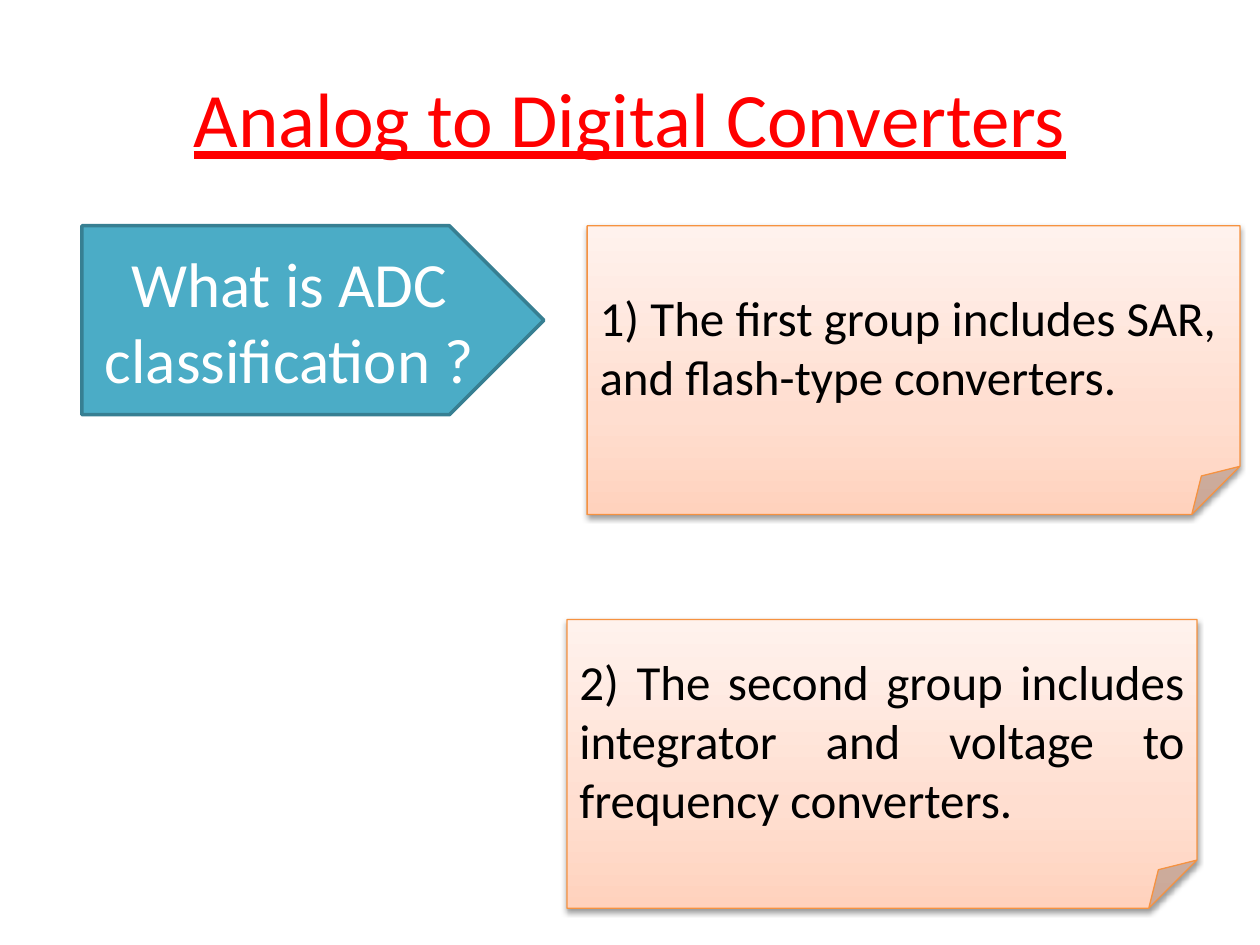
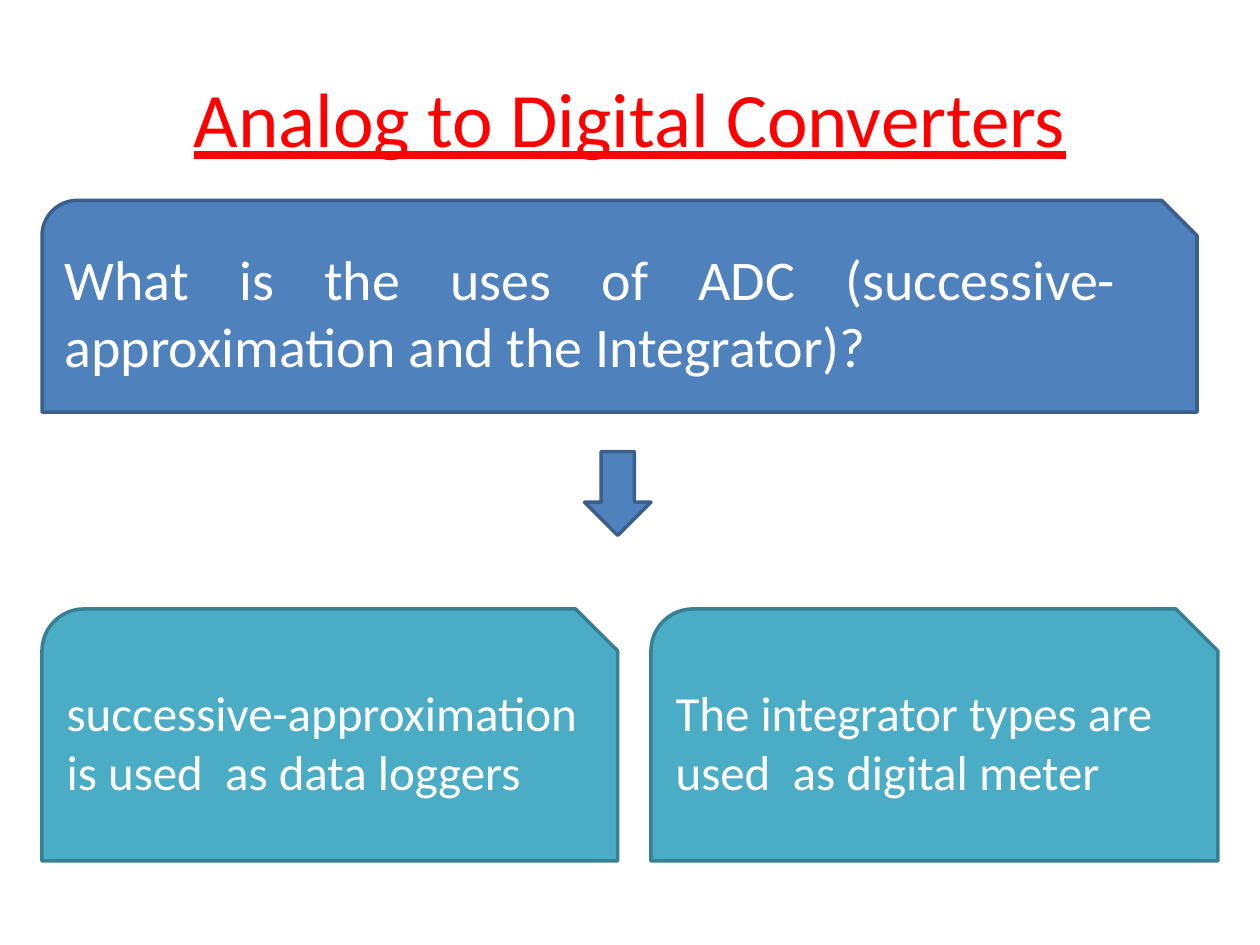
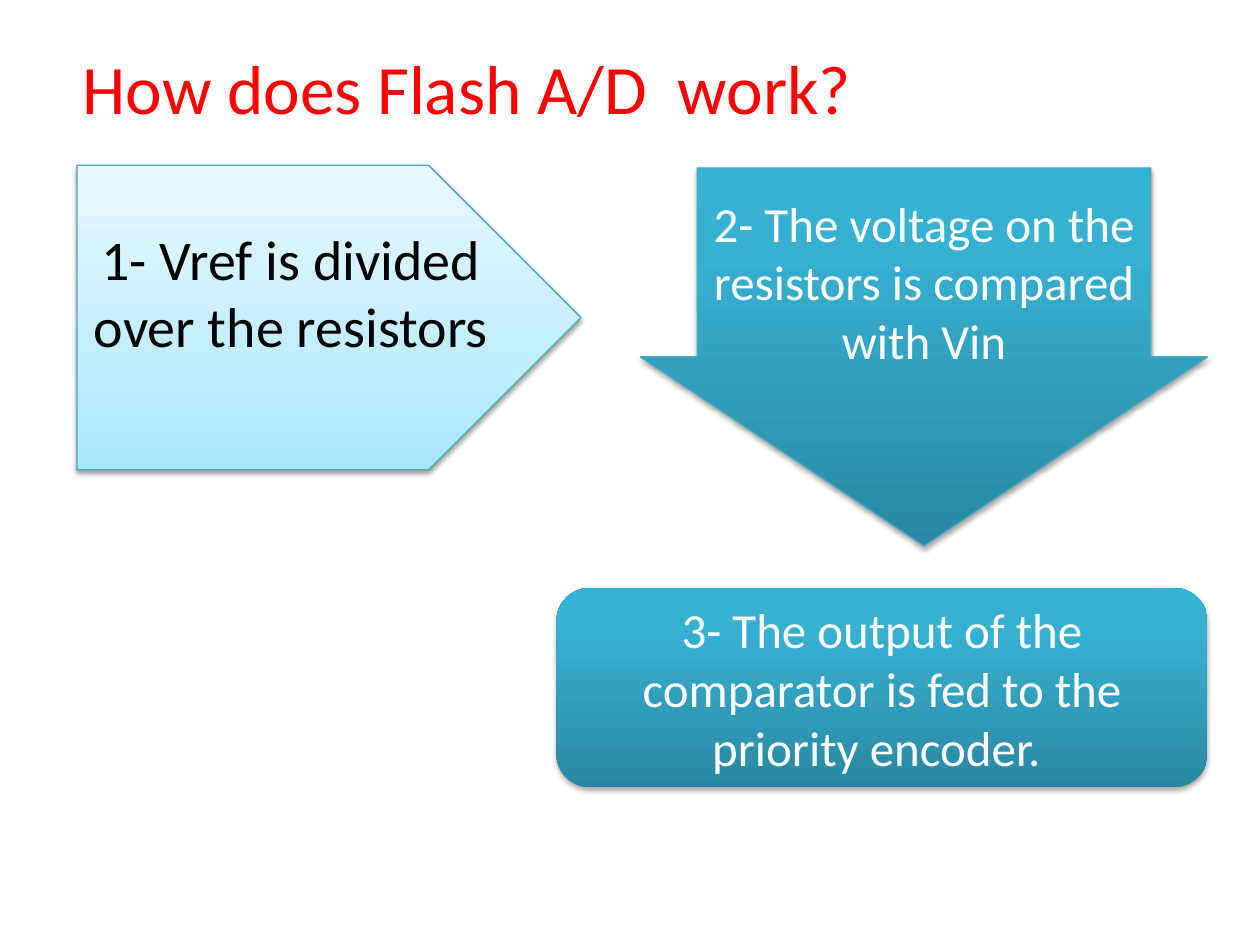
from dataclasses import dataclass
from typing import NamedTuple, Optional

from lxml.etree import SubElement
from pptx import Presentation
from pptx.dml.color import RGBColor
from pptx.enum.shapes import MSO_SHAPE
from pptx.enum.text import MSO_ANCHOR, PP_ALIGN
from pptx.oxml.ns import qn
from pptx.util import Pt


class Box(NamedTuple):
    """A rectangle in points."""

    left: float
    top: float
    width: float
    height: float

    def inner(self, left, top, width, height):
        """Return a box offset from this box's corner."""
        return Box(self.left + left, self.top + top, width, height)


@dataclass(frozen=True)
class Look:
    """Fill, outline, text colour and shadow strength of a panel."""

    stops: tuple
    line: Optional[str]
    line_width: float
    text: str
    shadow_alpha: int = 0


@dataclass(frozen=True)
class Theme:
    """Colours, looks and type sizes of the presentation."""

    font: str = "Calibri"
    title_color: str = "FF0000"
    background: str = "FFFFFF"
    title_size: float = 44
    small_title_size: float = 39.6
    question_size: float = 36
    large_size: float = 32
    text_size: float = 28
    blue: Look = Look(((0, "4F81BD"),), "3A5F8C", 2, "FFFFFF")
    teal: Look = Look(((0, "4BACC6"),), "377F92", 2, "FFFFFF")
    peach: Look = Look(((0, "FFD2BD"), (35, "FFDED0"), (100, "FFF2ED")), "F69240", 0.75, "000000", 38)
    pale_aqua: Look = Look(((0, "A7E6FF"), (35, "C1EDFF"), (100, "E7F8FF")), "46AAC5", 0.75, "000000", 38)
    deep_aqua: Look = Look(((0, "2A88A2"), (80, "37B1D2"), (100, "34B4D6")), "46AAC5", 0.75, "FFFFFF", 35)
    deep_aqua_plain: Look = Look(((0, "2A88A2"), (80, "37B1D2"), (100, "34B4D6")), None, 0, "FFFFFF", 35)


THEME = Theme()
SLIDE = Box(0, 0, 720, 540)
HEADING = "Analog to Digital Converters"


def add_run(paragraph, text, size, color, underline=None):
    """Add one formatted run to a paragraph."""
    run = paragraph.add_run()
    run.text = text
    run.font.name = THEME.font
    run.font.size = Pt(size)
    run.font.underline = underline
    run.font.color.rgb = RGBColor.from_string(color)


def apply_fill(shape, stops):
    """Fill a shape with one colour or with a gradient rising from its bottom."""
    if len(stops) == 1:
        shape.fill.solid()
        shape.fill.fore_color.rgb = RGBColor.from_string(stops[0][1])
        return
    shape.fill.gradient()
    shape.fill.gradient_angle = 90
    stop_list = shape.element.spPr.find(qn("a:gradFill")).find(qn("a:gsLst"))
    for stop in list(stop_list):
        stop_list.remove(stop)
    for position, color in stops:
        stop = SubElement(stop_list, qn("a:gs"), pos=str(position * 1000))
        SubElement(stop, qn("a:srgbClr"), val=color)


def apply_shadow(shape, alpha):
    """Give a shape a soft shadow below it, or none when alpha is zero."""
    shape.shadow.inherit = False
    if alpha:
        effects = shape.element.spPr.find(qn("a:effectLst"))
        shadow = SubElement(effects, qn("a:outerShdw"), blurRad=str(Pt(3.1)), dist=str(Pt(1.7)),
                            dir="5400000", rotWithShape="0")
        color = SubElement(shadow, qn("a:srgbClr"), val="000000")
        SubElement(color, qn("a:alpha"), val=str(alpha * 1000))


def add_panel(slide, kind, box, look, lines=(), size=THEME.text_size, align=PP_ALIGN.CENTER):
    """Add a preset shape with its look and one paragraph for each line."""
    shape = slide.shapes.add_shape(kind, *map(Pt, box))
    apply_fill(shape, look.stops)
    if look.line:
        shape.line.color.rgb = RGBColor.from_string(look.line)
        shape.line.width = Pt(look.line_width)
    else:
        shape.line.fill.background()
    apply_shadow(shape, look.shadow_alpha)
    frame = shape.text_frame
    frame.word_wrap = True
    frame.vertical_anchor = MSO_ANCHOR.MIDDLE
    for index, line in enumerate(lines):
        paragraph = frame.add_paragraph() if index else frame.paragraphs[0]
        paragraph.alignment = align
        add_run(paragraph, line, size, look.text)
    return shape


def place_title(slide, box):
    """Move the title placeholder and return its empty paragraph."""
    title = slide.shapes.title
    title.left, title.top, title.width, title.height = map(Pt, box)
    title.text_frame.vertical_anchor = MSO_ANCHOR.MIDDLE
    return title.text_frame.paragraphs[0]


def add_heading(slide, box):
    """Write the underlined heading of the topic slides."""
    paragraph = place_title(slide, box.inner(36, 21.6, 648, 90))
    paragraph.alignment = PP_ALIGN.CENTER
    add_run(paragraph, HEADING, THEME.title_size, THEME.title_color, True)


def build_classification(slide, box):
    """Place the classification question and its two answers."""
    add_heading(slide, box)
    add_panel(slide, MSO_SHAPE.PENTAGON, box.inner(46.8, 129, 264, 108), THEME.teal,
              ["What is ADC classification ?"], THEME.question_size)
    groups = (
        (box.inner(335.5, 129, 373, 165), "1) The first group includes SAR,  and flash-type converters."),
        (box.inner(324, 354, 360, 165),
         "2) The second group includes integrator and voltage to frequency converters."),
    )
    for group_box, text in groups:
        add_panel(slide, MSO_SHAPE.FOLDED_CORNER, group_box, THEME.peach, [text], align=PP_ALIGN.JUSTIFY)


def build_uses(slide, box):
    """Place the question about uses, an arrow and the two uses."""
    add_heading(slide, box)
    cards = (
        (box.inner(24, 114.5, 660, 121), THEME.blue, THEME.large_size,
         ["What is the uses of ADC (successive-  approximation and the Integrator)?"]),
        (box.inner(24, 348, 329, 144), THEME.teal, THEME.text_size,
         ["successive-approximation is used  as data loggers"]),
        (box.inner(372, 348, 324, 144), THEME.teal, THEME.text_size,
         ["The integrator types are", "used  as digital meter"]),
    )
    for card_box, look, size, lines in cards:
        add_panel(slide, MSO_SHAPE.SNIP_ROUND_RECTANGLE, card_box, look, lines, size, PP_ALIGN.JUSTIFY)
    add_panel(slide, MSO_SHAPE.DOWN_ARROW, box.inner(334, 258, 38, 48), THEME.blue)


def build_flash_steps(slide, box):
    """Place the flash converter question and its three steps."""
    paragraph = place_title(slide, box.inner(40, 42, 648, 74))
    apply_fill(slide.shapes.title, ((0, THEME.background),))
    paragraph.alignment = PP_ALIGN.LEFT
    paragraph.line_spacing = 0.9
    add_run(paragraph, "How does Flash A/D  work?", THEME.small_title_size, THEME.title_color)
    paragraph.add_line_break()
    divide = add_panel(slide, MSO_SHAPE.PENTAGON, box.inner(44, 94.5, 288, 174), THEME.pale_aqua,
                       ["1- Vref is divided over the resistors"], THEME.large_size)
    divide.text_frame.margin_bottom = Pt(33)
    compare = add_panel(slide, MSO_SHAPE.DOWN_ARROW, box.inner(366, 96, 324, 216), THEME.deep_aqua,
                        ["2- The voltage on the resistors is compared with Vin"])
    compare.adjustments[0] = 0.8
    compare.adjustments[1] = 0.5
    add_panel(slide, MSO_SHAPE.ROUNDED_RECTANGLE, box.inner(318, 336, 372, 114), THEME.deep_aqua_plain,
              ["3- The output of the comparator is fed to the priority encoder. "])


def main():
    """Build the three slides and save the presentation."""
    presentation = Presentation()
    presentation.slide_width = Pt(SLIDE.width)
    presentation.slide_height = Pt(SLIDE.height)
    title_only = presentation.slide_layouts.get_by_name("Title Only")
    for build in (build_classification, build_uses, build_flash_steps):
        build(presentation.slides.add_slide(title_only), SLIDE)
    presentation.save("out.pptx")


if __name__ == "__main__":
    main()
